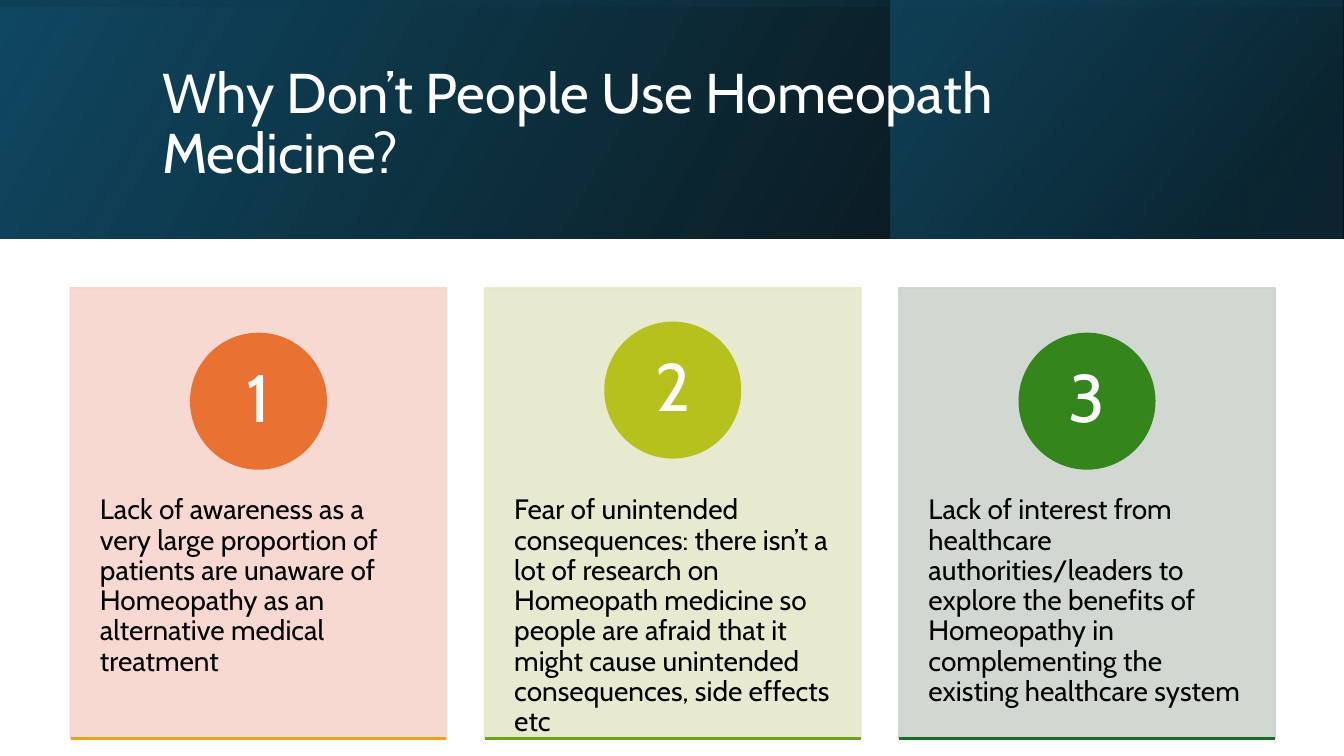
from lxml import etree
from pptx import Presentation
from pptx.dml.color import RGBColor
from pptx.enum.shapes import MSO_CONNECTOR, MSO_SHAPE
from pptx.enum.text import MSO_ANCHOR, PP_ALIGN
from pptx.oxml import parse_xml
from pptx.oxml.ns import qn
from pptx.util import Cm, Pt

NS = 'xmlns:a="http://schemas.openxmlformats.org/drawingml/2006/main"'
SLIDE_W, SLIDE_H = 33.87, 19.05
HEADER_H = 6.02
CARD_LEFT, CARD_TOP, CARD_PITCH = 1.78, 7.26, 10.44
CARD_W, CARD_H = 9.47, 11.35
BADGE = 3.4

# Card colour, badge colour, rule colour, badge top, text
CARDS = [
    ("F7D5CE", "E97132", "E0A61D", 8.41,
     "Lack of awareness as a very large proportion of patients are unaware "
     "of Homeopathy as an alternative medical treatment"),
    ("E5E8CA", "B7C11E", "6BA31D", 8.13,
     "Fear of unintended consequences: there isn’t a lot of research on "
     "Homeopath medicine so people are afraid that it might cause "
     "unintended consequences, side effects etc"),
    ("CCD4CD", "34861C", "196B24", 8.41,
     "Lack of interest from healthcare authorities/leaders to explore the "
     "benefits of Homeopathy in complementing the existing healthcare system"),
]


def rgb(value):
    return RGBColor.from_string(value)


class Deck:
    font = "Cabin"
    line_width = Pt(1.5)

    def __init__(self, slide):
        self.s = slide

    def shape(self, kind, x, y, w, h, color, alpha=100):
        sp = self.s.shapes.add_shape(kind, Cm(x), Cm(y), Cm(w), Cm(h))
        sp.shadow.inherit = False
        sp.fill.solid()
        sp.fill.fore_color.rgb = rgb(color)
        sp.line.color.rgb = rgb(color)
        sp.line.width = self.line_width
        if alpha < 100:
            for node in sp._element.spPr.iter(qn("a:srgbClr")):
                etree.SubElement(node, qn("a:alpha"), val=str(alpha * 1000))
        return sp

    def gradient(self, x, y, w, h, stops, angle, rotation=0):
        """Mirrored rectangle; stops are (position, colour, opacity)."""
        sp = self.s.shapes.add_shape(MSO_SHAPE.RECTANGLE, Cm(x), Cm(y), Cm(w), Cm(h))
        sp.shadow.inherit = False
        sp.line.fill.background()
        sp.rotation = rotation
        spPr = sp._element.spPr
        spPr.find(qn("a:xfrm")).set("flipH", "1")
        gs = "".join(
            f'<a:gs pos="{pos * 1000}"><a:srgbClr val="{color}">'
            f'<a:alpha val="{alpha * 1000}"/></a:srgbClr></a:gs>'
            for pos, color, alpha in stops)
        spPr.find(qn("a:prstGeom")).addnext(parse_xml(
            f'<a:gradFill {NS} rotWithShape="1"><a:gsLst>{gs}</a:gsLst>'
            f'<a:lin ang="{angle * 60000}" scaled="0"/></a:gradFill>'))

    def set_text(self, sp, text, size, color, inset, anchor, align=PP_ALIGN.LEFT):
        tf = sp.text_frame
        tf.word_wrap = True
        tf.vertical_anchor = anchor
        tf.margin_left = tf.margin_right = Cm(inset[0])
        tf.margin_top = tf.margin_bottom = Cm(inset[1])
        p = tf.paragraphs[0]
        p.text = text
        p.alignment = align
        p.line_spacing = 0.9
        p.font.name = self.font
        p.font.size = Pt(size)
        p.font.color.rgb = rgb(color)

    def text(self, x, y, w, h, text, size, color, inset, anchor):
        sp = self.s.shapes.add_textbox(Cm(x), Cm(y), Cm(w), Cm(h))
        self.set_text(sp, text, size, color, inset, anchor)

    def rule(self, x, y, w, color):
        line = self.s.shapes.add_connector(
            MSO_CONNECTOR.STRAIGHT, Cm(x), Cm(y), Cm(x + w), Cm(y))
        line.line.color.rgb = rgb(color)
        line.line.width = self.line_width
        etree.SubElement(line._element.spPr, qn("a:effectLst"))

    def card(self, x, number, fill, accent, rule, badge_top, text):
        self.shape(MSO_SHAPE.RECTANGLE, x, CARD_TOP, CARD_W, CARD_H, fill, 90)
        self.text(x, 11.58, CARD_W, 6.81, text, 20, "000000",
                  (0.74, 0.91), MSO_ANCHOR.TOP)
        badge = self.shape(MSO_SHAPE.OVAL, x + (CARD_W - BADGE) / 2, badge_top,
                           BADGE, BADGE, accent)
        self.set_text(badge, str(number), 48, "FFFFFF", (0.25, 0.03),
                      MSO_ANCHOR.MIDDLE, PP_ALIGN.CENTER)
        self.rule(x, CARD_TOP + CARD_H, CARD_W, rule)


def main():
    prs = Presentation()
    prs.slide_width, prs.slide_height = Cm(SLIDE_W), Cm(SLIDE_H)
    deck = Deck(prs.slides.add_slide(prs.slide_layouts[6]))

    # Header band: base, right panel, then a quarter-turned shade over both
    deck.gradient(0, 0, SLIDE_W, HEADER_H,
                  [(0, "000000", 96), (100, "104862", 100)], 330)
    deck.gradient(22.45, 0, 11.38, HEADER_H,
                  [(19, "0B3041", 68), (100, "156082", 48)], 320)
    offset = (SLIDE_W - HEADER_H) / 2
    deck.gradient(offset, -offset, HEADER_H, SLIDE_W,
                  [(23, "104862", 16), (99, "000000", 45)], 350, rotation=270)

    # Title
    deck.text(3.84, 0.97, 27, 4.37, "Why Don’t People Use Homeopath Medicine?",
              40, "FFFFFF", (0.25, 0.13), MSO_ANCHOR.MIDDLE)

    # Numbered cards
    for i, card in enumerate(CARDS):
        deck.card(CARD_LEFT + i * CARD_PITCH, i + 1, *card)

    prs.save("out.pptx")


if __name__ == "__main__":
    main()
